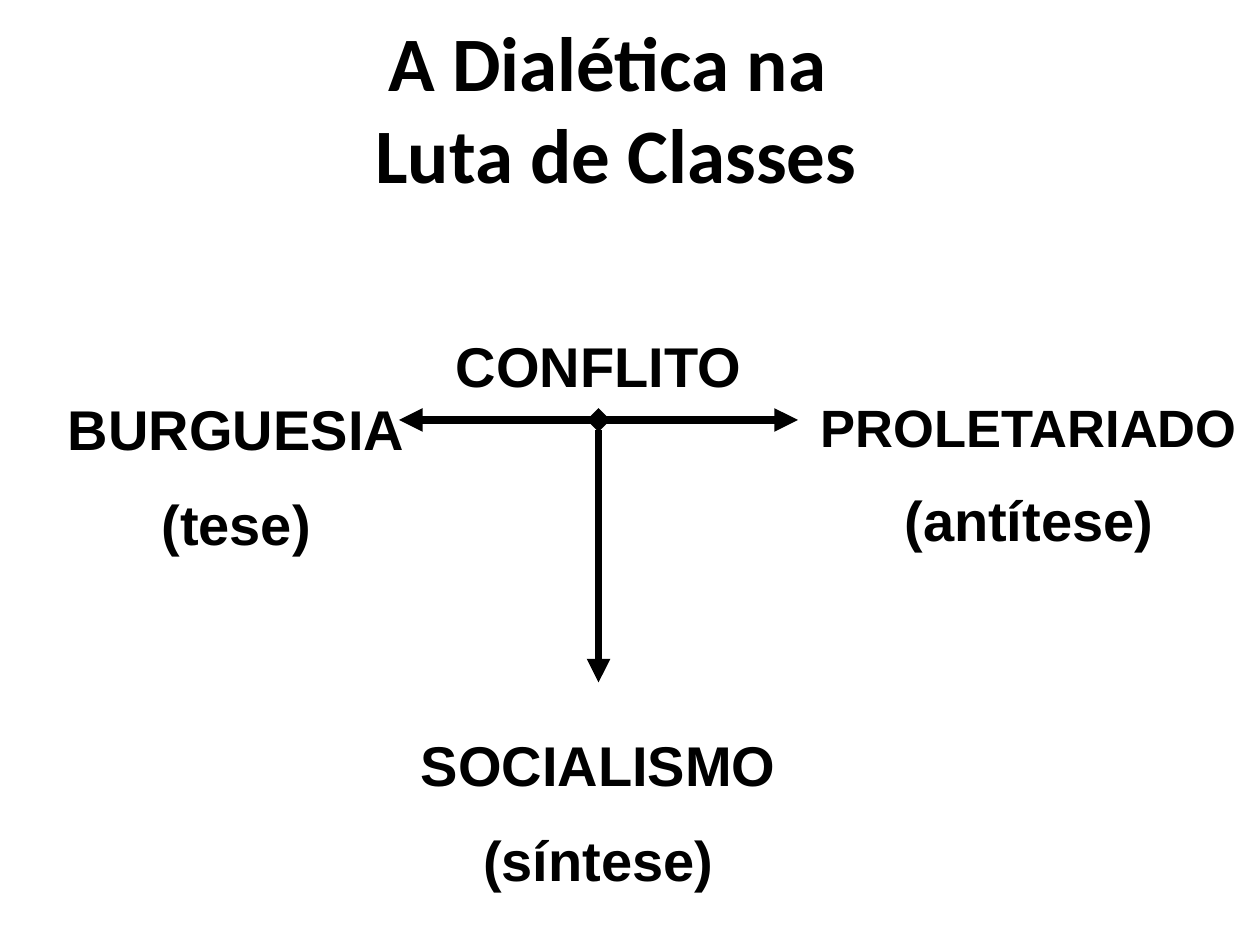
from dataclasses import dataclass

from lxml import etree
from pptx import Presentation
from pptx.dml.color import RGBColor
from pptx.enum.shapes import MSO_CONNECTOR
from pptx.enum.text import MSO_ANCHOR, MSO_AUTO_SIZE, PP_ALIGN
from pptx.oxml.ns import qn
from pptx.util import Pt

EMU_PER_PX = 9525
CENTER = PP_ALIGN.CENTER
MIDDLE = MSO_ANCHOR.MIDDLE
TOP = MSO_ANCHOR.TOP
FIT_SHAPE = MSO_AUTO_SIZE.SHAPE_TO_FIT_TEXT
NO_FIT = MSO_AUTO_SIZE.NONE
STRAIGHT = MSO_CONNECTOR.STRAIGHT


@dataclass(frozen=True)
class Theme:
    ink: RGBColor = RGBColor(0, 0, 0)
    paper: RGBColor = RGBColor(255, 255, 255)
    title_font: str = "Calibri"
    label_font: str = "Arial"
    title_size: int = 44
    label_size: int = 32
    small_size: int = 30
    line_width: float = 4.5
    space_before: str = "50000"  # half a line


THEME = Theme()


def px(*values):
    return [v * EMU_PER_PX for v in values]


def format_paragraph(p, font, size):
    p.alignment = CENTER
    for r in p.runs:
        r.font.name = font
        r.font.size = Pt(size)
        r.font.bold = True
        r.font.color.rgb = THEME.ink


def add_title(s, text, box):
    title = s.shapes.title
    title.left, title.top, title.width, title.height = px(*box)
    tf = title.text_frame
    tf.text = text
    tf.word_wrap = True
    tf.auto_size = NO_FIT
    tf.vertical_anchor = MIDDLE
    format_paragraph(tf.paragraphs[0], THEME.title_font, THEME.title_size)


def add_label(s, lines, box, fill=None):
    """Add a centred text box; lines holds (text, size) pairs."""
    sp = s.shapes.add_textbox(*px(*box))
    if fill is not None:
        sp.fill.solid()
        sp.fill.fore_color.rgb = fill
    tf = sp.text_frame
    tf.word_wrap = True
    tf.auto_size = FIT_SHAPE
    tf.vertical_anchor = TOP
    for i, (text, size) in enumerate(lines):
        p = tf.add_paragraph() if i else tf.paragraphs[0]
        p.text = text
        format_paragraph(p, THEME.label_font, size)
        # Spacing relative to the line height
        before = etree.SubElement(p._p.get_or_add_pPr(), qn("a:spcBef"))
        etree.SubElement(before, qn("a:spcPct"), val=THEME.space_before)


def add_arrow(s, start, end, head, tail):
    line = s.shapes.add_connector(STRAIGHT, *px(*start, *end))
    line.line.color.rgb = THEME.ink
    line.line.width = Pt(THEME.line_width)
    ln = line.line._get_or_add_ln()
    etree.SubElement(ln, qn("a:headEnd"), type=head)
    etree.SubElement(ln, qn("a:tailEnd"), type=tail)
    etree.SubElement(line._element.spPr, qn("a:effectLst"))


def main():
    prs = Presentation()
    prs.slide_width, prs.slide_height = px(960, 720)
    s = prs.slides.add_slide(prs.slide_layouts[5])
    s.background.fill.solid()
    s.background.fill.fore_color.rgb = THEME.paper

    add_title(s, "A Dialética na \vLuta de Classes", (41, 0, 857, 163))

    # Thesis and antithesis, joined by the conflict
    size = THEME.label_size
    add_label(s, [("BURGUESIA", size), ("(tese)", size)],
              (40, 296, 280, 137), THEME.paper)
    add_arrow(s, (304, 320), (608, 320), "triangle", "triangle")
    add_label(s, [("PROLETARIADO", THEME.small_size), ("(antítese)", size)],
              (608, 296, 352, 134))
    add_label(s, [("CONFLITO", size)], (312, 248, 288, 60))

    # Synthesis
    add_arrow(s, (456, 320), (456, 520), "diamond", "triangle")
    add_label(s, [("SOCIALISMO", size), ("(síntese)", size)],
              (288, 552, 336, 137))

    prs.save("out.pptx")


if __name__ == "__main__":
    main()
